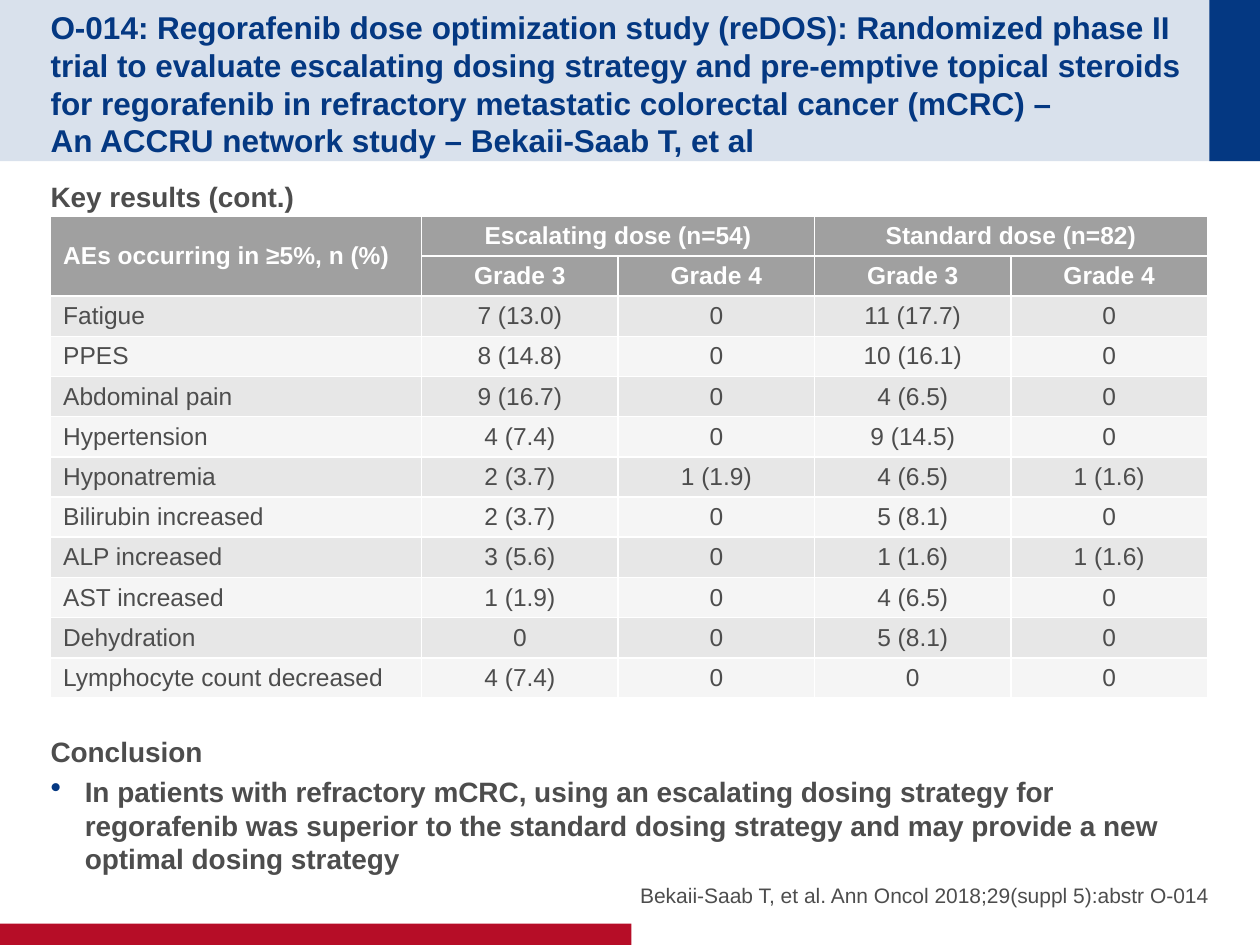
import lxml.etree
import pptx
import pptx.dml.color
import pptx.enum.shapes
import pptx.enum.text
import pptx.oxml.ns
import pptx.util

Cm = pptx.util.Cm
Pt = pptx.util.Pt
Align = pptx.enum.text.PP_ALIGN
Anchor = pptx.enum.text.MSO_ANCHOR
qn = pptx.oxml.ns.qn

COLORS = {"navy": "043882", "red": "B60D27", "text": "4D4D4D", "gray": "A0A0A0", "white": "FFFFFF"}
TITLE = (
    "O-014: Regorafenib dose optimization study (reDOS): Randomized phase II trial to evaluate "
    "escalating dosing strategy and pre-emptive topical steroids for regorafenib in refractory "
    "metastatic colorectal cancer (mCRC) – \vAn ACCRU network study – Bekaii-Saab T, et al"
)
CONCLUSION = (
    "In patients with refractory mCRC, using an escalating dosing strategy for regorafenib was "
    "superior to the standard dosing strategy and may provide a new optimal dosing strategy"
)
CITATION = "Bekaii-Saab T, et al. Ann Oncol 2018;29(suppl 5):abstr O-014"
ADVERSE_EVENTS = [
    ("AEs occurring in ≥5%, n (%)", "Escalating dose (n=54)", "", "Standard dose (n=82)", ""),
    ("", "Grade 3", "Grade 4", "Grade 3", "Grade 4"),
    ("Fatigue", "7 (13.0)", "0", "11 (17.7)", "0"),
    ("PPES", "8 (14.8)", "0", "10 (16.1)", "0"),
    ("Abdominal pain", "9 (16.7)", "0", "4 (6.5)", "0"),
    ("Hypertension", "4 (7.4)", "0", "9 (14.5)", "0"),
    ("Hyponatremia", "2 (3.7)", "1 (1.9)", "4 (6.5)", "1 (1.6)"),
    ("Bilirubin increased", "2 (3.7)", "0", "5 (8.1)", "0"),
    ("ALP increased", "3 (5.6)", "0", "1 (1.6)", "1 (1.6)"),
    ("AST increased", "1 (1.9)", "0", "4 (6.5)", "0"),
    ("Dehydration", "0", "0", "5 (8.1)", "0"),
    ("Lymphocyte count decreased", "4 (7.4)", "0", "0", "0"),
]
HEADER_ROWS = 2


def apply_format(target, values):
    """Set every attribute of target named in values."""
    for name, value in values.items():
        setattr(target, name, value)


def paint(fill, color, opacity=100):
    """Fill with a palette colour at the given opacity in percent."""
    fill.solid()
    fill.fore_color.rgb = pptx.dml.color.RGBColor.from_string(COLORS[color])
    if opacity < 100:
        rgb = fill._xPr.find(qn("a:solidFill")).find(qn("a:srgbClr"))
        lxml.etree.SubElement(rgb, qn("a:alpha"), val=str(opacity * 1000))


def write(paragraph, text, size, color, bold=False, **layout):
    """Put formatted text in a paragraph."""
    paragraph.text = text
    apply_format(paragraph, layout)
    for run in paragraph.runs:
        apply_format(run.font, {"name": "Arial", "size": Pt(size), "bold": bold})
        run.font.color.rgb = pptx.dml.color.RGBColor.from_string(COLORS[color])


def add_band(slide, box, color, opacity=100):
    """Draw a borderless rectangle in the box."""
    band = slide.shapes.add_shape(pptx.enum.shapes.MSO_SHAPE.RECTANGLE, *map(Cm, box))
    band.shadow.inherit = False
    band.line.fill.background()
    paint(band.fill, color, opacity)


def add_frame(slide, box, anchor, top=0.0, bottom=0.0):
    """Return the wrapped text frame of a new text box."""
    frame = slide.shapes.add_textbox(*map(Cm, box)).text_frame
    apply_format(frame, {
        "word_wrap": True, "vertical_anchor": anchor, "margin_left": 0, "margin_right": 0,
        "margin_top": Cm(top), "margin_bottom": Cm(bottom),
    })
    return frame


def add_bullet(paragraph, indent):
    """Give a paragraph a navy hanging bullet."""
    properties = paragraph._p.get_or_add_pPr()
    properties.set("marL", str(Cm(indent)))
    properties.set("indent", str(-Cm(indent)))
    bullet_color = lxml.etree.SubElement(properties, qn("a:buClr"))
    lxml.etree.SubElement(bullet_color, qn("a:srgbClr"), val=COLORS["navy"])
    lxml.etree.SubElement(properties, qn("a:buSzPct"), val="110000")
    lxml.etree.SubElement(properties, qn("a:buChar"), char="•")


def add_header(slide, left, top, width, height):
    """Place the tinted title band with its navy end block."""
    block = 1.02
    add_band(slide, (left, top, width, height), "navy", 15)
    add_band(slide, (left + width - block, top, block, height), "navy")
    title = add_frame(slide, (left + 1.02, top + 0.5, 22.88, height - 1.01), Anchor.MIDDLE, top=0.13)
    write(title.paragraphs[0], TITLE, 18, "navy", True)


def add_findings(slide, left, top, width, height):
    """Place the results heading and the conclusion below the table gap."""
    findings = add_frame(slide, (left, top, width, height), Anchor.TOP, 0.13, 0.13)
    heading = {"size": 16, "color": "text", "bold": True, "space_after": Pt(4)}
    write(findings.paragraphs[0], "Key results (cont.)", **heading)
    write(findings.add_paragraph(), "Conclusion", space_before=Pt(294), **heading)
    conclusion = findings.add_paragraph()
    write(conclusion, CONCLUSION, **heading)
    add_bullet(conclusion, 0.69)


def add_events_table(slide, left, top, width, height):
    """Place the adverse event table with merged dose headings."""
    row_count, column_count = len(ADVERSE_EVENTS), len(ADVERSE_EVENTS[0])
    box = map(Cm, (left, top, width, height))
    table = slide.shapes.add_table(row_count, column_count, *box).table
    label_width = 7.48
    for index, column in enumerate(table.columns):
        column.width = Cm((width - label_width) / (column_count - 1) if index else label_width)
    for row in table.rows:
        row.height = Cm(height / row_count)
    for start, end in (((0, 0), (1, 0)), ((0, 1), (0, 2)), ((0, 3), (0, 4))):
        table.cell(*start).merge(table.cell(*end))
    for row_index, values in enumerate(ADVERSE_EVENTS):
        is_header = row_index < HEADER_ROWS
        opacity = 100 if is_header else (25, 10)[row_index % 2]
        for column_index, value in enumerate(values):
            cell = table.cell(row_index, column_index)
            apply_format(cell, {
                "vertical_anchor": Anchor.MIDDLE, "margin_top": Cm(0.1), "margin_bottom": Cm(0.1),
            })
            paint(cell.fill, "gray", opacity)
            if not cell.is_spanned:
                write(cell.text_frame.paragraphs[0], value, 14, "white" if is_header else "text",
                      is_header, alignment=Align.CENTER if column_index else Align.LEFT)


def add_citation(slide, left, top, width, height):
    """Place the right-aligned source reference."""
    citation = add_frame(slide, (left, top, width, height), Anchor.BOTTOM)
    write(citation.paragraphs[0], CITATION, 12, "text", alignment=Align.RIGHT, space_after=Pt(4))


def main():
    """Build the slide and save it."""
    presentation = pptx.Presentation()
    apply_format(presentation, {"slide_width": Cm(25.4), "slide_height": Cm(19.05)})
    slide = presentation.slides.add_slide(presentation.slide_layouts[6])
    add_header(slide, 0, 0, 25.4, 3.25)
    add_band(slide, (0, 18.62, 12.73, 0.43), "red")
    add_findings(slide, 1.02, 3.48, 23.37, 13.18)
    add_citation(slide, 12.5, 16.94, 11.88, 1.35)
    add_events_table(slide, 1.02, 4.35, 23.32, 9.72)
    presentation.save("out.pptx")


if __name__ == "__main__":
    main()
